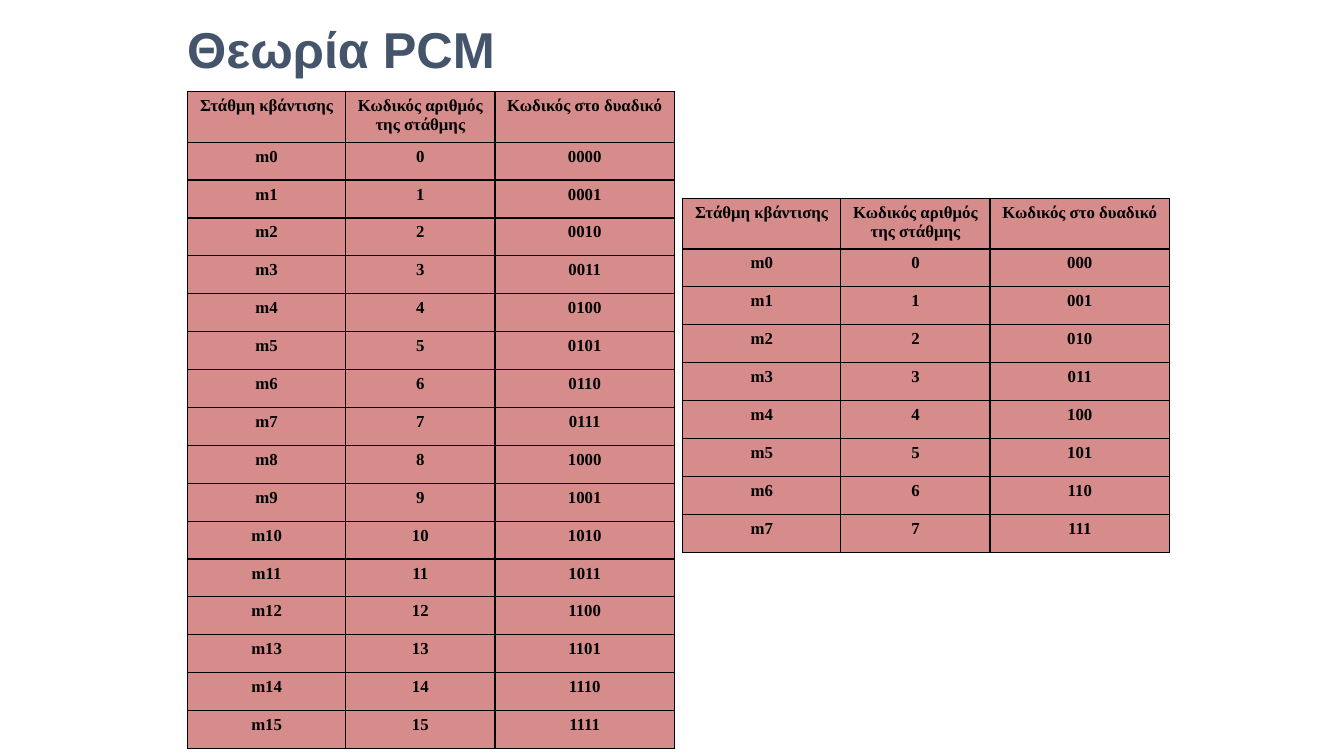
"""Build a slide with two PCM quantisation code tables."""
import pptx
import pptx.dml.color
import pptx.enum.shapes
import pptx.enum.text
import pptx.oxml
import pptx.oxml.ns
import pptx.util

Inches = pptx.util.Inches
Pt = pptx.util.Pt
RGBColor = pptx.dml.color.RGBColor

TITLE = "Θεωρία PCM"
HEADERS = ("Στάθμη κβάντισης", "Κωδικός αριθμός\nτης στάθμης", "Κωδικός στο δυαδικό")
CODE_TABLES = (
    {"bits": 4, "left": 1.86, "top": 0.91, "height": 6.52},
    {"bits": 3, "left": 6.77, "top": 1.97, "height": 3.51},
)
COLUMN_WIDTHS = (1.57, 1.48, 1.78)
HEADER_HEIGHT = 0.5
COLORS = {"title": "44546A", "text": "000000", "border": "000000", "cell": "D68C8A"}
TITLE_FONT = {"name": "Arial", "size": Pt(36), "bold": True}
CELL_FONT = {"name": "Times New Roman", "size": Pt(12), "bold": True}
BORDER_WIDTH = Pt(1)


def format_font(font, values, color):
    for name, value in values.items():
        setattr(font, name, value)
    font.color.rgb = RGBColor.from_string(COLORS[color])


def add_title(slide):
    title = slide.shapes.add_shape(
        pptx.enum.shapes.MSO_SHAPE.ROUNDED_RECTANGLE,
        Inches(1.71), Inches(0.13), Inches(3.62), Inches(0.76))
    title.adjustments[0] = 0.22
    title.shadow.inherit = False
    title.fill.background()
    title.line.fill.background()
    title.text_frame.word_wrap = True
    title.text_frame.vertical_anchor = pptx.enum.text.MSO_ANCHOR.BOTTOM
    paragraph = title.text_frame.paragraphs[0]
    paragraph.alignment = pptx.enum.text.PP_ALIGN.LEFT
    paragraph.line_spacing = 0.9
    run = paragraph.add_run()
    run.text = TITLE
    format_font(run.font, TITLE_FONT, "title")


def add_borders(cell):
    properties = cell._tc.get_or_add_tcPr()
    for index, side in enumerate(("lnL", "lnR", "lnT", "lnB")):
        border = pptx.oxml.parse_xml(
            f'<a:{side} {pptx.oxml.ns.nsdecls("a")} w="{BORDER_WIDTH}"><a:solidFill>'
            f'<a:srgbClr val="{COLORS["border"]}"/></a:solidFill></a:{side}>')
        properties.insert(index, border)


def fill_cell(cell, text):
    cell.fill.solid()
    cell.fill.fore_color.rgb = RGBColor.from_string(COLORS["cell"])
    add_borders(cell)
    cell.text = text
    for paragraph in cell.text_frame.paragraphs:
        paragraph.alignment = pptx.enum.text.PP_ALIGN.CENTER
        for run in paragraph.runs:
            format_font(run.font, CELL_FONT, "text")


def add_code_table(slide, bits, left, top, height):
    levels = 2 ** bits
    rows = [HEADERS] + [(f"m{n}", str(n), f"{n:0{bits}b}") for n in range(levels)]
    table = slide.shapes.add_table(
        len(rows), len(HEADERS), Inches(left), Inches(top),
        Inches(sum(COLUMN_WIDTHS)), Inches(height)).table
    for column, width in zip(table.columns, COLUMN_WIDTHS):
        column.width = Inches(width)
    level_height = (height - HEADER_HEIGHT) / levels
    for row_index, texts in enumerate(rows):
        table.rows[row_index].height = Inches(level_height if row_index else HEADER_HEIGHT)
        for column_index, text in enumerate(texts):
            fill_cell(table.cell(row_index, column_index), text)


def main():
    presentation = pptx.Presentation()
    presentation.slide_width = Inches(13.33)
    presentation.slide_height = Inches(7.5)
    slide = presentation.slides.add_slide(presentation.slide_layouts[6])
    add_title(slide)
    for code_table in CODE_TABLES:
        add_code_table(slide, **code_table)
    presentation.save("out.pptx")


if __name__ == "__main__":
    main()
